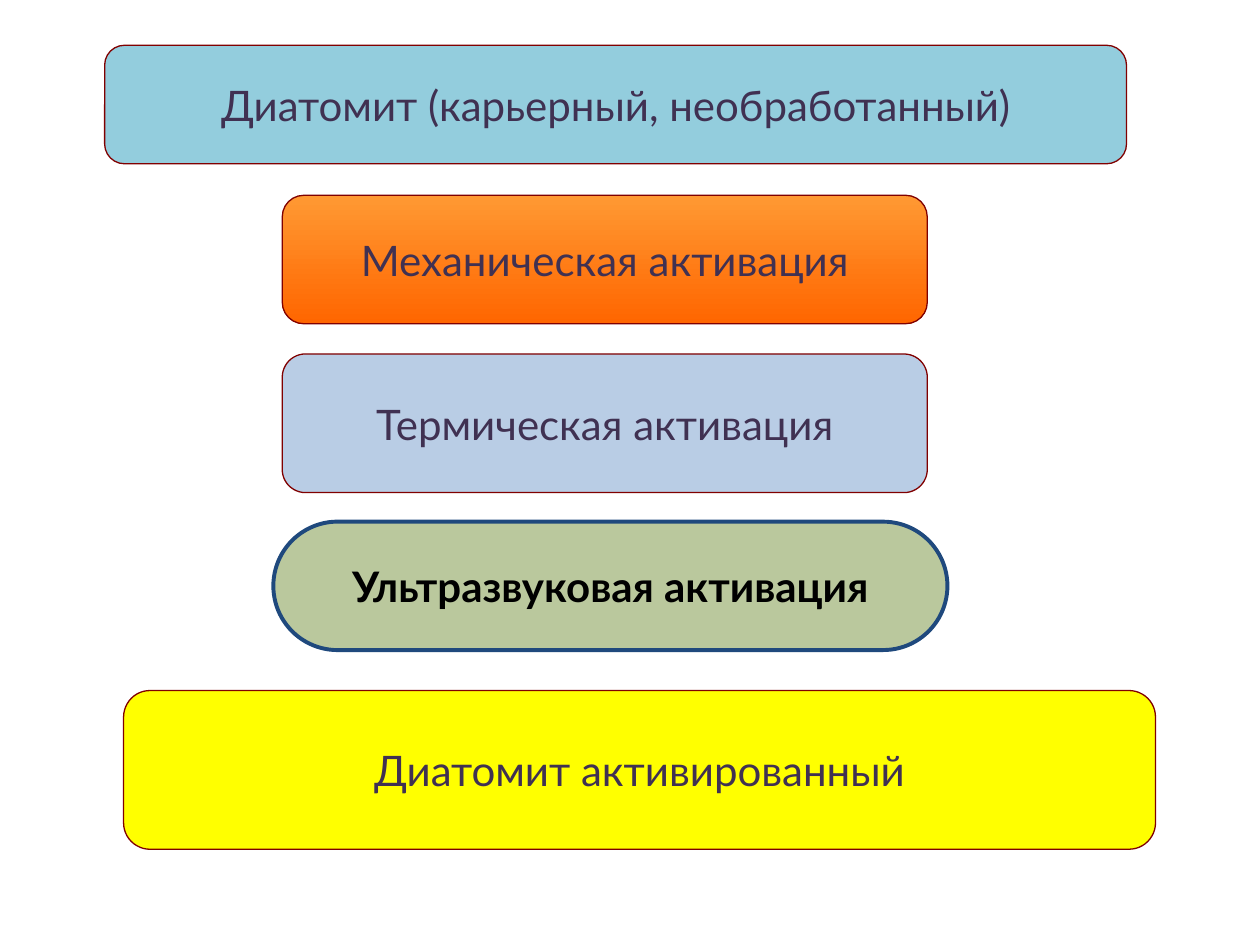
from lxml import etree
from pptx import Presentation
from pptx import util as u
from pptx.dml.color import RGBColor
from pptx.enum import shapes, text
from pptx.oxml.ns import qn

STAGE_LEFT, STAGE_WIDTH = 161.3, 368.6
PLAIN = {"line": "800000", "line_width": 0.75, "color": "403152",
         "bold": False, "rounding": 0.167}
ACCENT = {"line": "1F497D", "line_width": 2.25, "color": "000000",
          "bold": True, "rounding": 0.5}

# Wording, (left, top, width, height) in points, fill colours, opacity, style
STEPS = [
    ("Диатомит (карьерный, необработанный)", (59.8, 25.9, 583.9, 67.7),
     ["93CDDD"], 100, PLAIN),
    ("Механическая активация", (STAGE_LEFT, 111.6, STAGE_WIDTH, 73.4),
     ["FF9933", "FF6600"], 100, PLAIN),
    ("Термическая активация", (STAGE_LEFT, 202.3, STAGE_WIDTH, 79.2),
     ["B9CDE5"], 100, PLAIN),
    ("Ультразвуковая активация", (156.2, 298.1, 385.2, 73.4),
     ["77933C"], 50, ACCENT),
    ("Диатомит активированный", (70.6, 394.6, 589.7, 90.7),
     ["FFFF00"], 100, PLAIN),
]


def rgb(value):
    return RGBColor.from_string(value)


def set_attributes(target, values):
    for name, value in values.items():
        setattr(target, name, value)


def fill_shape(shape, colors, opacity):
    """One colour gives a solid fill, two give a top-to-bottom gradient."""
    fill = shape.fill
    if len(colors) == 2:
        fill.gradient()
        fill.gradient_angle = 270
        for stop, color in zip(fill.gradient_stops, colors):
            stop.color.rgb = rgb(color)
        return
    fill.solid()
    fill.fore_color.rgb = rgb(colors[0])
    if opacity < 100:
        color_element = shape.element.spPr.find(qn("a:solidFill"))[0]
        etree.SubElement(color_element, qn("a:alpha"), val=str(opacity * 1000))


def write_label(shape, wording, style):
    frame = shape.text_frame
    set_attributes(frame, {
        "word_wrap": False,
        "vertical_anchor": text.MSO_ANCHOR.MIDDLE,
        "margin_left": u.Pt(6.5), "margin_right": u.Pt(6.5),
        "margin_top": u.Pt(3.5), "margin_bottom": u.Pt(3.5),
    })
    paragraph = frame.paragraphs[0]
    paragraph.alignment = text.PP_ALIGN.CENTER
    run = paragraph.add_run()
    run.text = wording
    set_attributes(run.font, {"name": "Lato", "size": u.Pt(24),
                              "bold": style["bold"]})
    run.font.color.rgb = rgb(style["color"])


def add_step(slide, wording, box, colors, opacity, style):
    shape = slide.shapes.add_shape(
        shapes.MSO_SHAPE.ROUNDED_RECTANGLE, *(u.Pt(length) for length in box))
    shape.shadow.inherit = False
    shape.adjustments[0] = style["rounding"]
    fill_shape(shape, colors, opacity)
    shape.line.color.rgb = rgb(style["line"])
    shape.line.width = u.Pt(style["line_width"])
    write_label(shape, wording, style)


def main():
    presentation = Presentation()
    set_attributes(presentation, {"slide_width": u.Pt(720),
                                  "slide_height": u.Pt(540)})
    slide = presentation.slides.add_slide(presentation.slide_layouts[6])

    # Processing chain from raw to activated diatomite
    for step in STEPS:
        add_step(slide, *step)

    presentation.save("out.pptx")


if __name__ == "__main__":
    main()
